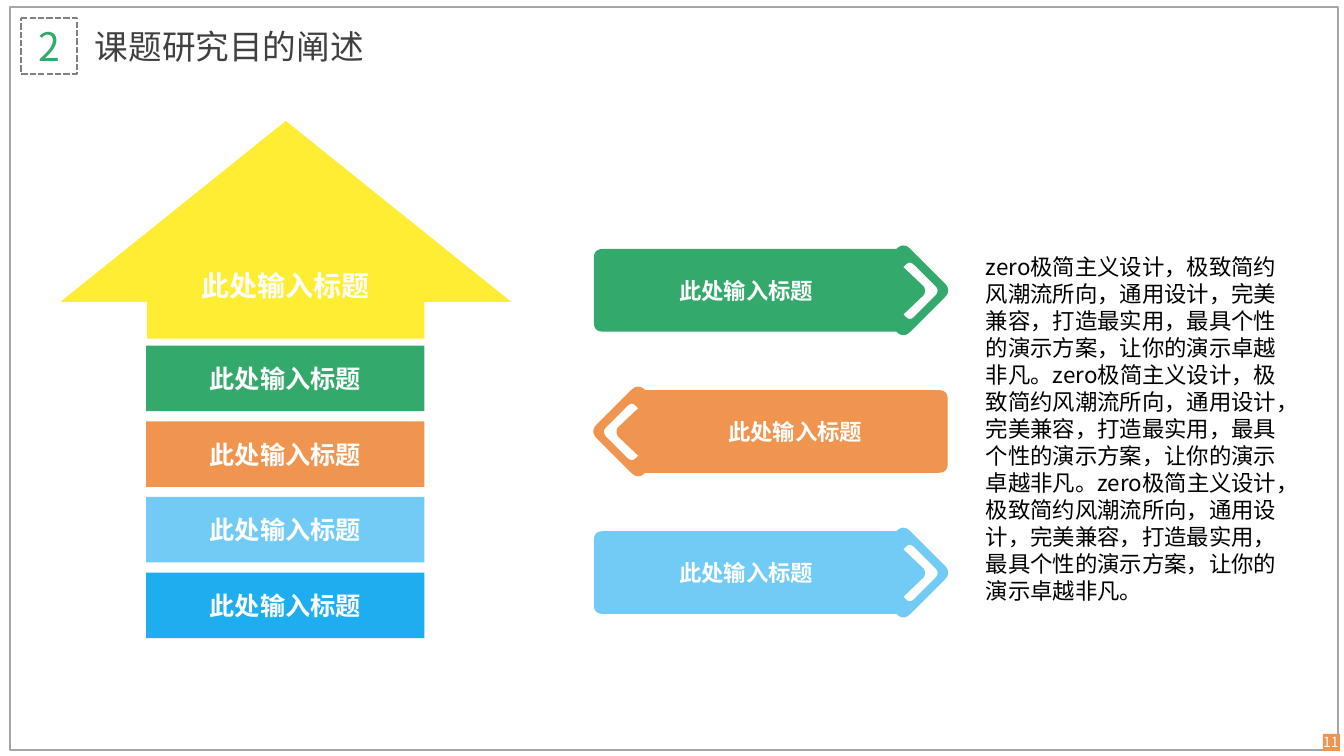
import pptx
import pptx.dml.color
import pptx.enum.dml
import pptx.enum.shapes
import pptx.enum.text
import pptx.oxml.ns
import pptx.util
from lxml import etree

PX = 9144  # EMU in one px, 100 px to the inch
FONT = "Noto Sans CJK SC"
LABEL = "此处输入标题"
BODY = ("zero极简主义设计，极致简约风潮流所向，通用设计，完美兼容，"
        "打造最实用，最具个性的演示方案，让你的演示卓越非凡。") * 3
COLORS = {
    "green": "33AA6C", "orange": "F0954F", "sky": "71CBF4", "blue": "1EADEE",
    "yellow": "FFED33", "white": "FFFFFF", "black": "000000",
    "title": "404040", "frame": "A6A6A6", "dash": "808080",
}
SHAPE = pptx.enum.shapes.MSO_SHAPE
ALIGN = pptx.enum.text.PP_ALIGN
ANCHOR = pptx.enum.text.MSO_ANCHOR

# Banner contours, each a ring of corners (start, control, end)
BANNER_WIDTH = 351
BANNER_BODY = [
    ((300, 3), (307, -4), (314, 3)), ((348, 37), (355, 44), (348, 51)),
    ((314, 85), (307, 92), (300, 85)), ((9, 85), (0, 85), (0, 76)),
    ((0, 12), (0, 3), (9, 3)),
]
BANNER_CHEVRON = [
    ((307, 21), (307, 21), (307, 21)), ((327, 40), (330, 44), (327, 49)),
    ((307, 68), (307, 68), (307, 68)), ((309, 70), (313, 75), (318, 70)),
    ((339, 49), (343, 44), (339, 40)), ((318, 19), (313, 14), (309, 19)),
]


def px(*lengths):
    return [round(length * PX) for length in lengths]


def rgb(name):
    return pptx.dml.color.RGBColor.from_string(COLORS[name])


def set_text(shape, text, size, color="white", bold=False, align=ALIGN.CENTER,
             anchor=ANCHOR.MIDDLE, insets=(10, 5, 10, 5), spacing=None):
    frame = shape.text_frame
    frame.word_wrap = True
    frame.auto_size = pptx.enum.text.MSO_AUTO_SIZE.NONE
    frame.vertical_anchor = anchor
    (frame.margin_left, frame.margin_top,
     frame.margin_right, frame.margin_bottom) = px(*insets)
    para = frame.paragraphs[0]
    para.alignment = align
    if spacing:
        para.line_spacing = pptx.util.Pt(spacing)
    span = para.add_run()
    span.text = text
    span.font.size = pptx.util.Pt(size)
    span.font.bold = bold
    span.font.name = FONT
    span.font.color.rgb = rgb(color)
    # East Asian typeface
    properties = span.font._element
    etree.SubElement(properties, pptx.oxml.ns.qn("a:ea"), typeface=FONT)


def paint(shape, fill=None, line=None, width=1):
    shape.shadow.inherit = False
    if fill:
        shape.fill.solid()
        shape.fill.fore_color.rgb = rgb(fill)
    else:
        shape.fill.background()
    if line:
        shape.line.color.rgb = rgb(line)
        shape.line.width = pptx.util.Pt(width)
    else:
        shape.line.fill.background()


def add_box(page, kind, place, adjustments=(), **look):
    box = page.shapes.add_shape(kind, *px(*place))
    for index, value in enumerate(adjustments):
        box.adjustments[index] = value
    paint(box, **look)
    return box


def add_text(page, place, text, **style):
    set_text(page.shapes.add_textbox(*px(*place)), text, **style)


def contour(corners, left, top, flipped, steps=6):
    """Points of a ring whose corners are quadratic curves, in EMU."""
    points = []
    for start, control, end in corners:
        for step in range(steps + 1):
            t = step / steps
            x, y = ((1 - t) ** 2 * a + 2 * t * (1 - t) * b + t * t * c
                    for a, b, c in zip(start, control, end))
            points.append(px(left + (BANNER_WIDTH - x if flipped else x), top + y))
    return points


def add_banner(page, left, top, color, flipped):
    body, chevron = (contour(ring, left, top, flipped)
                     for ring in (BANNER_BODY, BANNER_CHEVRON))
    builder = page.shapes.build_freeform(*body[0])
    builder.add_line_segments(body[1:], close=True)
    builder.move_to(*chevron[0])
    builder.add_line_segments(chevron[1:], close=True)
    banner = builder.convert_to_shape()
    paint(banner, fill=color)
    insets = (59, 5, 10, 5) if flipped else (10, 5, 59, 5)
    set_text(banner, LABEL, size=16, bold=True, insets=insets)


def add_title(page, place, text):
    title = page.shapes.title
    title.left, title.top, title.width, title.height = px(*place)
    set_text(title, text, size=24, color="title", align=ALIGN.LEFT)


def main():
    deck = pptx.Presentation()
    deck.slide_width, deck.slide_height = px(1333, 750)
    page = deck.slides.add_slide(deck.slide_layouts[5])

    # Frame, section number and title
    add_box(page, SHAPE.RECTANGLE, (10, 7, 1317, 737), line="frame")
    number = add_box(page, SHAPE.ROUNDED_RECTANGLE, (21, 18, 55, 55), [0],
                     line="dash", width=1.5)
    number.line.dash_style = pptx.enum.dml.MSO_LINE.SQUARE_DOT
    set_text(number, "2", size=28, color="green", insets=(0, 0, 0, 0))
    add_title(page, (84, 18, 359, 55), "课题研究目的阐述")

    # Page number
    add_box(page, SHAPE.RECTANGLE, (1312, 728, 17, 17), fill="orange")
    add_text(page, (1298, 728, 44, 17), "11", size=10)

    # Description
    add_text(page, (968, 246, 319, 365), BODY, size=16, color="black",
             align=ALIGN.LEFT, anchor=ANCHOR.TOP, spacing=19.3)

    # Banners pointing right, left, right
    for row, color in enumerate(("green", "orange", "sky")):
        add_banner(page, 589, 244 + 140 * row, color, flipped=row == 1)

    # Arrow on top of stacked bars
    for row, color in enumerate(("green", "orange", "sky", "blue")):
        bar = add_box(page, SHAPE.RECTANGLE, (145, 343 + 75 * row, 276, 65), fill=color)
        set_text(bar, LABEL, size=18, bold=True)
    arrow = add_box(page, SHAPE.UP_ARROW, (60, 120, 447, 216), (0.615, 0.831),
                    fill="yellow")
    set_text(arrow, LABEL, size=20, bold=True)

    deck.save("out.pptx")


if __name__ == "__main__":
    main()
